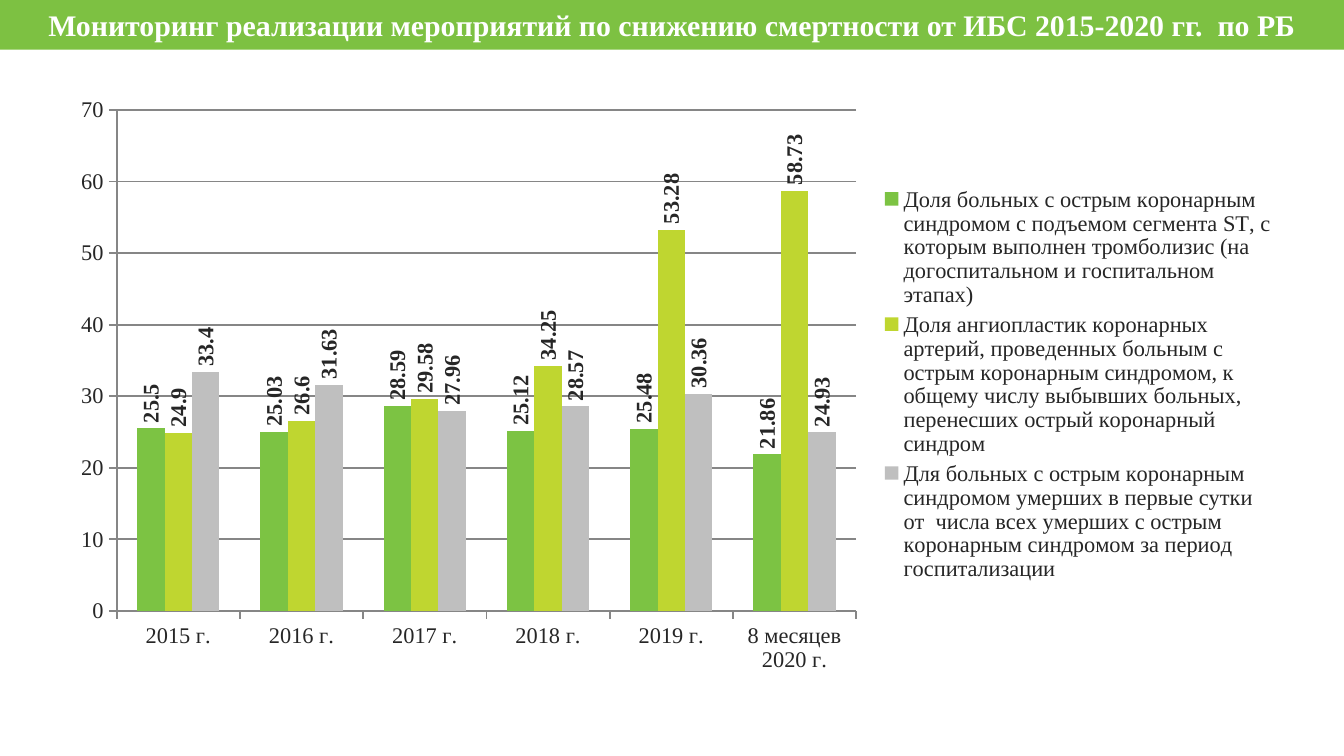
from lxml import etree
from pptx import Presentation
from pptx.chart.data import CategoryChartData
from pptx.dml.color import RGBColor
from pptx.enum.chart import XL_CHART_TYPE as ChartType
from pptx.enum.chart import XL_LABEL_POSITION as LabelPosition
from pptx.enum.chart import XL_LEGEND_POSITION as LegendPosition
from pptx.enum.chart import XL_TICK_MARK as TickMark
from pptx.enum.shapes import MSO_SHAPE as ShapeType
from pptx.enum.text import MSO_ANCHOR as Anchor
from pptx.enum.text import PP_ALIGN as Align
from pptx.oxml.ns import qn
from pptx.util import Inches, Pt

BANNER_GREEN = RGBColor(0x7D, 0xC1, 0x42)
GREEN = RGBColor(0x7C, 0xC3, 0x43)
LIME = RGBColor(0xBF, 0xD6, 0x30)
GREY = RGBColor(0xBF, 0xBF, 0xBF)
LINE_GREY = RGBColor(0x86, 0x86, 0x86)
DARK = RGBColor(0x26, 0x26, 0x26)
WHITE = RGBColor(0xFF, 0xFF, 0xFF)
SERIF = "Times New Roman"

TITLE = "Мониторинг реализации мероприятий по снижению смертности от ИБС 2015-2020 гг.  по РБ"
PERIODS = ["2015 г.", "2016 г.", "2017 г.", "2018 г.", "2019 г.", "8 месяцев 2020 г."]
INDICATORS = [
    ("Доля больных с острым коронарным синдромом с подъемом сегмента ST, с которым "
     "выполнен тромболизис (на догоспитальном и госпитальном этапах)",
     (25.5, 25.03, 28.59, 25.12, 25.48, 21.86), GREEN),
    ("Доля ангиопластик коронарных артерий, проведенных больным с острым коронарным "
     "синдромом, к общему числу выбывших больных, перенесших острый коронарный синдром",
     (24.9, 26.6, 29.58, 34.25, 53.28, 58.73), LIME),
    ("Для больных с острым коронарным синдромом умерших в первые сутки от  числа всех "
     "умерших с острым коронарным синдромом за период госпитализации",
     (33.4, 31.63, 27.96, 28.57, 30.36, 24.93), GREY),
]


def style_font(font, size, color=DARK, bold=False):
    font.name = SERIF
    font.size = Pt(size)
    font.bold = bold
    font.color.rgb = color


def set_layout(element, index, box, inner=False):
    """Place a chart part by fractions of the chart: left, top, width, height."""
    for old_layout in element.findall(qn("c:layout")):
        element.remove(old_layout)
    layout = etree.Element(qn("c:layout"))
    manual = etree.SubElement(layout, qn("c:manualLayout"))
    settings = [("layoutTarget", "inner")] if inner else []
    settings += [("xMode", "edge"), ("yMode", "edge")]
    settings += zip("xywh", box)
    for name, value in settings:
        etree.SubElement(manual, qn(f"c:{name}")).set("val", str(value))
    element.insert(index, layout)


def add_banner(slide, left, top, width, height):
    banner = slide.shapes.add_shape(ShapeType.RECTANGLE, left, top, width, height)
    banner.shadow.inherit = False
    banner.fill.solid()
    banner.fill.fore_color.rgb = BANNER_GREEN
    banner.line.fill.background()
    frame = banner.text_frame
    frame.word_wrap = True
    frame.vertical_anchor = Anchor.MIDDLE
    frame.text = TITLE
    paragraph = frame.paragraphs[0]
    paragraph.alignment = Align.CENTER
    style_font(paragraph.runs[0].font, 16, WHITE, bold=True)


def style_axis(axis):
    axis.major_tick_mark = TickMark.OUTSIDE
    axis.minor_tick_mark = TickMark.NONE
    axis.format.line.color.rgb = LINE_GREY
    axis.format.line.width = Pt(1)
    style_font(axis.tick_labels.font, 12)


def style_series(series, color):
    series.format.fill.solid()
    series.format.fill.fore_color.rgb = color
    labels = series.data_labels
    labels.show_value = True
    labels.position = LabelPosition.OUTSIDE_END
    style_font(labels.font, 12, bold=True)
    # Turn the labels to read upwards
    body = labels._element.find(f"{qn('c:txPr')}/{qn('a:bodyPr')}")
    body.set("rot", "-5400000")
    body.set("vert", "horz")


def add_indicator_chart(slide, left, top, width, height):
    data = CategoryChartData()
    data.categories = PERIODS
    for name, values, _ in INDICATORS:
        data.add_series(name, values)
    chart = slide.shapes.add_chart(
        ChartType.COLUMN_CLUSTERED, left, top, width, height, data).chart
    chart.has_title = False
    chart.font.name = "Arial"
    chart.font.size = Pt(18)
    chart.font.color.rgb = DARK

    # Columns
    plot = chart.plots[0]
    plot.gap_width = 150
    plot.overlap = 0
    plot.vary_by_categories = False
    for series, (_, _, color) in zip(plot.series, INDICATORS):
        style_series(series, color)

    # Axes
    style_axis(chart.category_axis)
    value_axis = chart.value_axis
    style_axis(value_axis)
    value_axis.minimum_scale = 0
    value_axis.maximum_scale = 70
    value_axis.major_unit = 10
    value_axis.has_major_gridlines = True
    value_axis.major_gridlines.format.line.color.rgb = LINE_GREY
    value_axis.major_gridlines.format.line.width = Pt(1)

    # Legend
    chart.has_legend = True
    legend = chart.legend
    legend.position = LegendPosition.RIGHT
    legend.include_in_layout = False
    style_font(legend.font, 12)

    plot_area = chart._chartSpace.find(f"{qn('c:chart')}/{qn('c:plotArea')}")
    set_layout(plot_area, 0, (0.05, 0.04, 0.6, 0.84), inner=True)
    set_layout(legend._element, 1, (0.67, 0.16, 0.32, 0.68))


def main():
    presentation = Presentation()
    # Widescreen, 16:9
    presentation.slide_width = Inches(10)
    presentation.slide_height = presentation.slide_width * 9 // 16
    slide = presentation.slides.add_slide(presentation.slide_layouts[6])
    add_banner(slide, 0, 0, presentation.slide_width, Inches(0.37))
    add_indicator_chart(slide, Inches(0.41), Inches(0.64), Inches(9.17), Inches(4.44))
    presentation.save("out.pptx")


if __name__ == "__main__":
    main()
